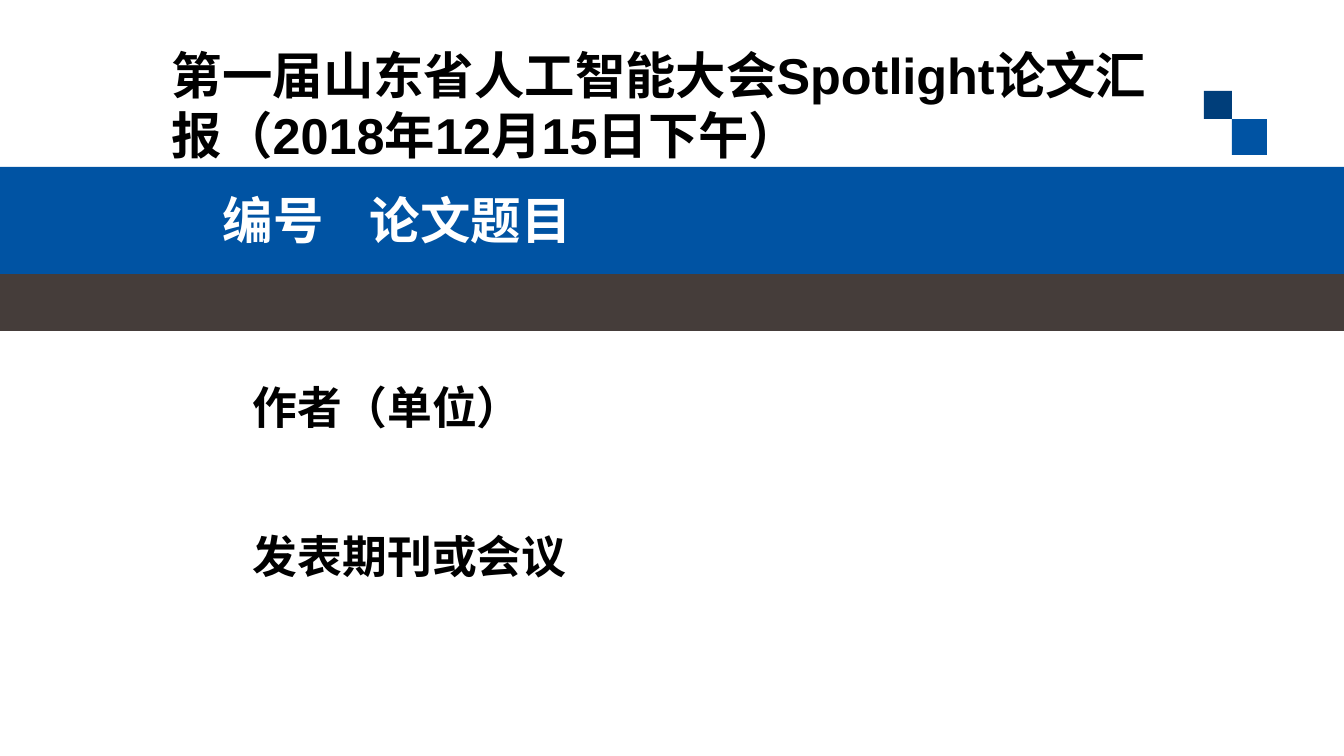
"""Build the title slide for a conference spotlight paper report."""
from dataclasses import dataclass

from lxml.etree import SubElement
from pptx import Presentation
from pptx.dml.color import RGBColor
from pptx.enum.shapes import MSO_SHAPE
from pptx.enum.text import MSO_ANCHOR
from pptx.oxml.ns import qn
from pptx.util import Emu, Pt


@dataclass(frozen=True)
class Theme:
    blue: str = "0053A3"
    navy: str = "003E7A"
    brown: str = "453D3A"
    white: str = "FFFFFF"
    black: str = "000000"
    title_size: int = 36
    detail_size: int = 32
    latin_font: str = "Arial"
    heading_font: str = "DejaVu Sans"
    chinese_font: str = "Noto Sans CJK SC"


THEME = Theme()
EMU_PER_PX = 914400 / 100.8
SLIDE_WIDTH, SLIDE_HEIGHT = 1344, 756
TOP_INSET = 10
DETAIL_GAP = 67
HEADING_TAB = 147

BLOCKS = [
    ((0, 274, SLIDE_WIDTH, 57), THEME.brown),
    ((0, 167, SLIDE_WIDTH, 107), THEME.blue),
    ((1232, 119, 35, 36), THEME.blue),
    ((1204, 91, 28, 28), THEME.navy),
]

TEXTS = [
    ((213, 178, 949, 72), ["编号\t论文题目"],
     THEME.heading_font, THEME.title_size, THEME.white, 44),
    ((243, 369, 843, 214), ["作者（单位）", "发表期刊或会议"],
     THEME.chinese_font, THEME.detail_size, THEME.black, 39),
    ((162, 34, 1020, 132), ["第一届山东省人工智能大会Spotlight论文汇报（2018年12月15日下午）"],
     THEME.latin_font, THEME.title_size, THEME.black, 43),
]


def px(length):
    return Emu(round(length * EMU_PER_PX))


def add_block(slide, box, color):
    shape = slide.shapes.add_shape(MSO_SHAPE.RECTANGLE, *map(px, box))
    shape.shadow.inherit = False
    shape.fill.solid()
    shape.fill.fore_color.rgb = RGBColor.from_string(color)
    shape.line.fill.background()


def add_tab_stop(paragraph, position):
    tabs = SubElement(paragraph._p.get_or_add_pPr(), qn("a:tabLst"))
    SubElement(tabs, qn("a:tab"), pos=str(px(position)), algn="l")


def add_text(slide, box, lines, font_name, size, color, line_height):
    frame = slide.shapes.add_textbox(*map(px, box)).text_frame
    frame.word_wrap = True
    frame.vertical_anchor = MSO_ANCHOR.TOP
    frame.margin_top = px(TOP_INSET)
    frame.margin_bottom = 0
    for index, line in enumerate(lines):
        paragraph = frame.add_paragraph() if index else frame.paragraphs[0]
        if "\t" in line:
            add_tab_stop(paragraph, HEADING_TAB)
        paragraph.line_spacing = Pt(line_height)
        if index:
            paragraph.space_before = Pt(DETAIL_GAP)
        run = paragraph.add_run()
        run.text = line
        run.font.size = Pt(size)
        run.font.bold = True
        run.font.color.rgb = RGBColor.from_string(color)
        run.font.name = font_name
        SubElement(run._r.get_or_add_rPr(), qn("a:ea"), typeface=THEME.chinese_font)


def main():
    presentation = Presentation()
    presentation.slide_width = px(SLIDE_WIDTH)
    presentation.slide_height = px(SLIDE_HEIGHT)
    slide = presentation.slides.add_slide(presentation.slide_layouts[6])
    for block in BLOCKS:
        add_block(slide, *block)
    for text in TEXTS:
        add_text(slide, *text)
    presentation.save("out.pptx")


if __name__ == "__main__":
    main()
